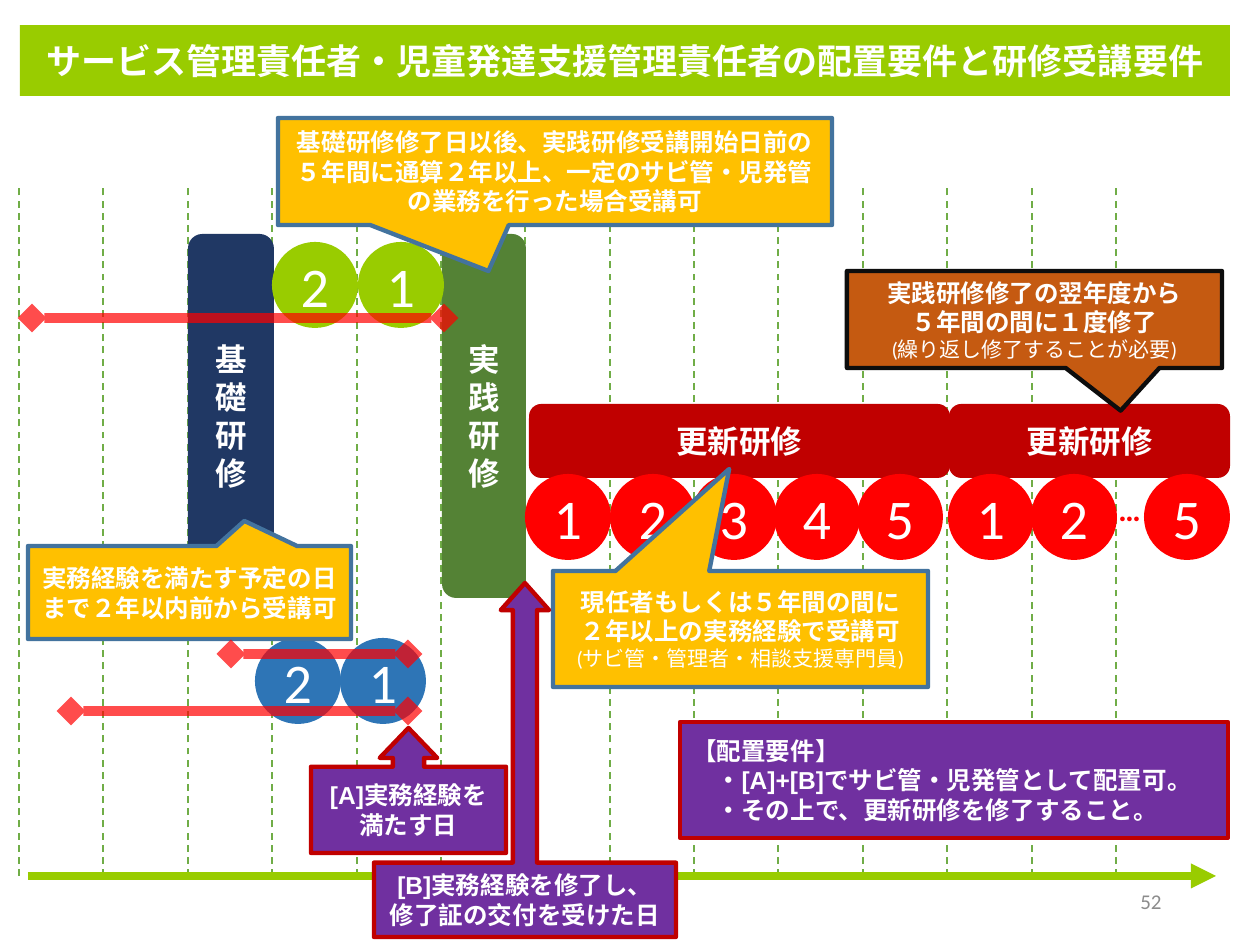
"""Build the slide on placement and training requirements for service managers."""
import pptx
import pptx.dml.color
import pptx.enum.dml
import pptx.enum.shapes
import pptx.enum.text
import pptx.oxml
import pptx.oxml.ns
import pptx.util

RGBColor = pptx.dml.color.RGBColor
Shape = pptx.enum.shapes.MSO_SHAPE
Align = pptx.enum.text.PP_ALIGN
Anchor = pptx.enum.text.MSO_ANCHOR

PIXEL = 914400 / 126
CIRCLE = 86

WHITE = RGBColor(0xFF, 0xFF, 0xFF)
GRAY = RGBColor(0x8C, 0x8C, 0x8C)
BLACK = RGBColor(0x0D, 0x0D, 0x0D)
LIME = RGBColor(0x99, 0xCC, 0x00)
GRID_GREEN = RGBColor(0x70, 0xAD, 0x47)
FOREST = RGBColor(0x54, 0x82, 0x35)
NAVY = RGBColor(0x20, 0x38, 0x64)
BLUE = RGBColor(0x2E, 0x75, 0xB6)
STEEL = RGBColor(0x43, 0x73, 0x9E)
RED = RGBColor(0xFF, 0x00, 0x00)
DARK_RED = RGBColor(0xC0, 0x00, 0x00)
AMBER = RGBColor(0xFF, 0xC0, 0x00)
ORANGE = RGBColor(0xC5, 0x5A, 0x11)
PURPLE = RGBColor(0x70, 0x30, 0xA0)


def px(value):
    """Turn pixels into EMU."""
    return pptx.util.Emu(round(value * PIXEL))


def inside(box, left, top, width, height):
    """Return the absolute bounds of a part placed relative to a box."""
    return box[0] + left, box[1] + top, width, height


def write_text(shape, text, size=14, font="Calibri", color=WHITE, bold=True,
               align=Align.CENTER, anchor=Anchor.MIDDLE, note=None):
    """Write one paragraph per line, with an optional smaller plain note below."""
    frame = shape.text_frame
    frame.word_wrap = True
    frame.vertical_anchor = anchor
    lines = [(line, size, bold) for line in text.split("\n")]
    if note:
        lines.append((note, 12, False))
    for index, (line, line_size, line_bold) in enumerate(lines):
        paragraph = frame.add_paragraph() if index else frame.paragraphs[0]
        paragraph.alignment = align
        run = paragraph.add_run()
        run.text = line
        run.font.name = font
        run.font.size = pptx.util.Pt(line_size)
        run.font.bold = line_bold
        run.font.color.rgb = color


def add_block(slide, kind, bounds, fill, text, outline=None, adjustments=(), **text_format):
    """Add a filled preset shape holding text."""
    shape = slide.shapes.add_shape(kind, *map(px, bounds))
    shape.shadow.inherit = False
    shape.fill.solid()
    shape.fill.fore_color.rgb = fill
    if outline is None:
        shape.line.fill.background()
    else:
        shape.line.color.rgb = outline
        shape.line.width = pptx.util.Pt(2.5)
    for index, value in enumerate(adjustments):
        shape.adjustments[index] = value
    write_text(shape, text, **text_format)


def add_label(slide, bounds, text, **text_format):
    """Add a text box."""
    write_text(slide.shapes.add_textbox(*map(px, bounds)), text, **text_format)


def add_line(slide, start, end, color, width, dashed=False, head=None, tail=None, alpha=None):
    """Add a straight line with optional dashes, arrowheads and opacity."""
    line = slide.shapes.add_connector(
        pptx.enum.shapes.MSO_CONNECTOR.STRAIGHT, *map(px, start + end))
    line.line.color.rgb = color
    line.line.width = pptx.util.Pt(width)
    if dashed:
        line.line.dash_style = pptx.enum.dml.MSO_LINE.DASH
    properties = line._element.spPr
    outline = line.line._get_or_add_ln()
    qn = pptx.oxml.ns.qn
    if alpha:
        color_element = outline.find(".//" + qn("a:srgbClr"))
        color_element.append(color_element.makeelement(
            qn("a:alpha"), {"val": str(alpha * 1000)}))
    for tag, kind in (("a:headEnd", head), ("a:tailEnd", tail)):
        if kind:
            outline.append(outline.makeelement(qn(tag), {"type": kind}))
    properties.append(properties.makeelement(qn("a:effectLst"), {}))


def add_period(slide, start, end):
    """Add a translucent red period line with a diamond at each end."""
    add_line(slide, start, end, RED, 5.5, head="diamond", tail="diamond", alpha=70)


def add_years(slide, box, top, years, fill):
    """Add numbered year circles from (left, number) pairs."""
    for left, number in years:
        add_block(slide, Shape.OVAL, inside(box, left, top, CIRCLE, CIRCLE), fill,
                  str(number), size=32, bold=False)


def add_training(slide, bounds, fill, text):
    """Add a rounded bar naming a training course."""
    add_block(slide, Shape.ROUNDED_RECTANGLE, bounds, fill, text, size=18)


def add_callout(slide, bounds, tip, text, fill=AMBER, outline=STEEL, **text_format):
    """Add a rectangular callout with its tip given as shares of its size."""
    add_block(slide, Shape.RECTANGULAR_CALLOUT, bounds, fill, text, outline, tip, **text_format)


def draw_header(slide, box):
    """Draw the title band."""
    add_block(slide, Shape.RECTANGLE, box, LIME,
              "サービス管理責任者・児童発達支援管理責任者の配置要件と研修受講要件",
              size=20, font="Noto Sans CJK JP")


def draw_timeline(slide, box):
    """Draw the yearly grid, the time axis and the page number."""
    left, top, width, height = box
    bottom = top + height
    columns = 13
    for index in range(columns + 1):
        column = left + round(width * index / columns)
        add_line(slide, (column, bottom), (column, top), GRID_GREEN, 1, dashed=True)
    add_label(slide, inside(box, 871, height, 284, 50), "52", size=12, color=GRAY,
              bold=False, align=Align.RIGHT)
    add_line(slide, (left + 9, bottom), (left + 1197, bottom), LIME, 4.75, tail="triangle")


def draw_basic_training(slide, box):
    """Draw the basic training bar with the experience periods."""
    left, top = box[:2]
    add_training(slide, inside(box, 160, 0, 86, 364), NAVY, "基礎研修")
    add_years(slide, box, 404, [(312, 1), (227, 2)], BLUE)
    add_callout(slide, inside(box, 0, 312, 323, 93), (0.17, -0.77),
                "実務経験を満たす予定の日まで２年以内前から受講可")
    for start, height in ((43, 477), (203, 420)):
        add_period(slide, (left + start, top + height), (left + 380, top + height))


def draw_practical_training(slide, box):
    """Draw the practical training bar with the period before it."""
    left, top = box[:2]
    add_training(slide, inside(box, 410, 116, 84, 364), FOREST, "実践研修")
    add_years(slide, box, 124, [(326, 1), (240, 2)], LIME)
    add_callout(slide, inside(box, 246, 0, 554, 107), (-0.12, 0.93),
                "基礎研修修了日以後、実践研修受講開始日前の５年間に通算２年以上、"
                "一定のサビ管・児発管の業務を行った場合受講可")
    add_period(slide, (left, top + 200), (left + 412, top + 200))


def draw_renewal_training(slide, box):
    """Draw the renewal training bars, their years and their conditions."""
    for left, width in ((4, 421), (424, 281)):
        add_training(slide, inside(box, left, 133, width, 74), DARK_RED, "更新研修")
    add_years(slide, box, 203, [(0, 1), (85, 2), (166, 3), (249, 4), (332, 5),
                                (423, 1), (506, 2), (619, 5)], RED)
    add_label(slide, inside(box, 581, 213, 106, 50), "…", size=18, color=RED,
              align=Align.LEFT, anchor=Anchor.TOP)
    add_callout(slide, inside(box, 322, 0, 375, 97), (0.23, 0.94),
                "実践研修修了の翌年度から\n５年間の間に１度修了", ORANGE, BLACK,
                note="(繰り返し修了することが必要)")
    add_callout(slide, inside(box, 28, 300, 375, 116), (-0.03, -1.38),
                "現任者もしくは５年間の間に\n２年以上の実務経験で受講可",
                note="(サビ管・管理者・相談支援専門員)")


def draw_placement(slide, box):
    """Draw the two milestone arrows and the placement requirements."""
    milestones = (
        ((63, 0, 302, 354), (0.08, 0.08, 0.09, 0.21),
         "[B]実務経験を修了し、\n修了証の交付を受けた日"),
        ((0, 145, 195, 125), (0.25, 0.23, 0.24, 0.69), "[A]実務経験を\n満たす日"),
    )
    for bounds, adjustments, text in milestones:
        add_block(slide, Shape.UP_ARROW_CALLOUT, inside(box, *bounds), PURPLE, text,
                  DARK_RED, adjustments, font="Arial")
    add_block(slide, Shape.RECTANGLE, inside(box, 369, 139, 548, 116), PURPLE,
              "【配置要件】\n　・[A]+[B]でサビ管・児発管として配置可。\n"
              "　・その上で、更新研修を修了すること。",
              DARK_RED, font="Arial", align=Align.LEFT)


def main():
    """Build and save the slide."""
    presentation = pptx.Presentation()
    presentation.slide_width = px(1260)
    presentation.slide_height = px(945)
    slide = presentation.slides.add_slide(presentation.slide_layouts[6])
    draw_timeline(slide, (19, 188, 1097, 688))
    draw_header(slide, (20, 25, 1210, 71))
    draw_basic_training(slide, (28, 234, 400, 490))
    draw_practical_training(slide, (32, 118, 800, 480))
    draw_renewal_training(slide, (525, 271, 705, 416))
    draw_placement(slide, (311, 583, 917, 354))
    presentation.save("out.pptx")


if __name__ == "__main__":
    main()
